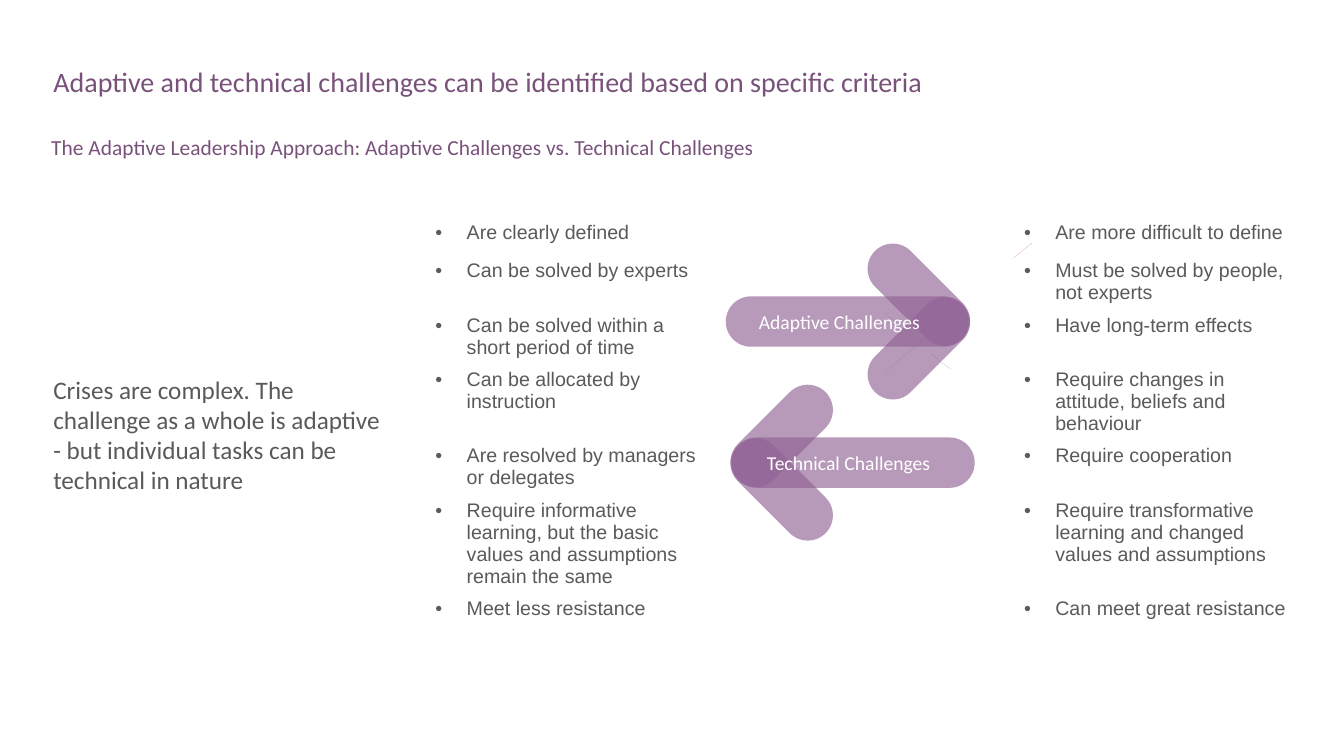
import pptx
import pptx.util
import pptx.dml.color
import pptx.enum.shapes
import pptx.enum.text
import pptx.oxml.ns
import lxml.etree

# The page is a grid of square cells: 133.33 columns by 75 rows
CELL = 0.1
COLUMNS, ROWS = 133.33, 75
GREY, PLUM, MAUVE, WHITE = "595A59", "79527B", "916395", "FFFFFF"
TOP = pptx.enum.text.MSO_ANCHOR.TOP
MIDDLE = pptx.enum.text.MSO_ANCHOR.MIDDLE

CRITERIA = [
    # row height, technical challenge, adaptive challenge
    (3.8, "Are clearly defined", "Are more difficult to define"),
    (5.4, "Can be solved by experts", "Must be solved by people, not experts"),
    (5.4, "Can be solved within a short period of time", "Have long-term effects"),
    (7.5, "Can be allocated by instruction",
     "Require changes in attitude, beliefs and behaviour"),
    (5.4, "Are resolved by managers or delegates", "Require cooperation"),
    (9.7, "Require informative learning, but the basic values and assumptions "
          "remain the same",
     "Require transformative learning and changed values and assumptions"),
    (4.1, "Meet less resistance", "Can meet great resistance"),
]

SLIVERS = [
    ("53A58F", [(87.8, 31.1), (91.2, 34), (87.8, 31.1)]),
    ("498977", [(93.9, 31.7), (91.2, 34), (93.9, 31.7)]),
    ("53A58F", [(91.2, 34), (87.8, 36.9), (91.2, 34)]),
    ("498977", [(92.4, 35.1), (93.3, 35.9), (94.3, 36.6), (93.3, 35.9)]),
    ("B14434", [(102.4, 24.1), (101.4, 24.9), (100.5, 25.6), (101.4, 24.9)]),
]


def cells(count):
    return pptx.util.Inches(count * CELL)


def color(value):
    return pptx.dml.color.RGBColor.from_string(value)


def paint(shape, value, opacity=100):
    shape.shadow.inherit = False
    shape.line.fill.background()
    shape.fill.solid()
    shape.fill.fore_color.rgb = color(value)
    if opacity < 100:
        tone = shape.fill._xPr.find(".//" + pptx.oxml.ns.qn("a:srgbClr"))
        lxml.etree.SubElement(tone, pptx.oxml.ns.qn("a:alpha"), val=str(opacity * 1000))


def write(frame, text, size, value, font="Calibri", anchor=TOP, spacing=None):
    frame.text = text
    frame.word_wrap = True
    frame.vertical_anchor = anchor
    para = frame.paragraphs[0]
    para.alignment = pptx.enum.text.PP_ALIGN.LEFT
    if spacing:
        para.line_spacing = spacing
    for span in para.runs:
        span.font.size = pptx.util.Pt(size)
        span.font.name = font
        span.font.color.rgb = color(value)


def add_text(page, area, *args, **options):
    box = page.shapes.add_textbox(*map(cells, area))
    write(box.text_frame, *args, **options)


def add_title(page, area, text):
    title = page.shapes.title
    title.left, title.top, title.width, title.height = map(cells, area)
    write(title.text_frame, text, 20, PLUM, spacing=0.9)
    title.text_frame.auto_size = pptx.enum.text.MSO_AUTO_SIZE.NONE


def add_bullet(para):
    properties = para._p.get_or_add_pPr()
    indent = cells(3.1)
    properties.set("marL", str(indent))
    properties.set("indent", str(-indent))
    tint = lxml.etree.SubElement(properties, pptx.oxml.ns.qn("a:buClr"))
    lxml.etree.SubElement(tint, pptx.oxml.ns.qn("a:srgbClr"), val=GREY)
    lxml.etree.SubElement(properties, pptx.oxml.ns.qn("a:buFont"), typeface="Arial")
    lxml.etree.SubElement(properties, pptx.oxml.ns.qn("a:buChar"), char="•")


def add_criteria(page, left, top, width):
    height = sum(row[0] for row in CRITERIA)
    area = map(cells, (left, top, width, height))
    table = page.shapes.add_table(len(CRITERIA), 3, *area).table
    table.first_row = table.horz_banding = False
    for column in table.columns:
        column.width = cells(width / 3)
    for row, (row_height, technical, adaptive) in zip(table.rows, CRITERIA):
        row.height = cells(row_height)
        for cell, text in zip(row.cells, (technical, "", adaptive)):
            cell.fill.solid()
            cell.fill.fore_color.rgb = color(WHITE)
            if text:
                write(cell.text_frame, text, 14, GREY, font="Arial")
                add_bullet(cell.text_frame.paragraphs[0])
            else:
                # keeps the empty cell from stretching its row
                para = cell.text_frame.paragraphs[0]
                lxml.etree.SubElement(para._p, pptx.oxml.ns.qn("a:endParaRPr"), sz="1400")


def add_slivers(page):
    for value, points in SLIVERS:
        start, *others = [(cells(x), cells(y)) for x, y in points]
        outline = page.shapes.build_freeform(*start)
        outline.add_line_segments(others, close=True)
        paint(outline.convert_to_shape(), value)


def add_arrow(page, left, middle, direction, label):
    """A shaft and two barbs; direction is 1 for right and -1 for left."""
    group = page.shapes.add_group_shape()
    length, barb, thick = 24.1, 12.3, 5
    center = left + length / 2
    tip = center + direction * 7.1
    parts = [
        (center, middle, length, 0),
        (tip, middle + 2.65, barb, -45 * direction),
        (tip, middle - 2.65, barb, 45 * direction),
    ]
    for x, y, width, angle in parts:
        bar = group.shapes.add_shape(
            pptx.enum.shapes.MSO_SHAPE.ROUNDED_RECTANGLE,
            *map(cells, (x - width / 2, y - thick / 2, width, thick)))
        bar.adjustments[0] = 0.5
        bar.rotation = angle
        paint(bar, MAUVE, opacity=65)
    text_left = left + 2.4 - direction * 0.1
    box = group.shapes.add_textbox(*map(cells, (text_left, middle - 5, 19.2, 10)))
    write(box.text_frame, label, 14, WHITE, anchor=MIDDLE)


def main():
    deck = pptx.Presentation()
    deck.slide_width, deck.slide_height = cells(COLUMNS), cells(ROWS)
    page = deck.slides.add_slide(deck.slide_layouts.get_by_name("Title Only"))

    # Criteria on both sides of the arrows
    add_criteria(page, 42.2, 21.5, 87.6)

    # Headings and the statement on the left
    add_text(page, (4.3, 17.9, 34.9, 50.4),
             "Crises are complex. The challenge as a whole is adaptive - but "
             "individual tasks can be technical in nature", 18, GREY, anchor=MIDDLE)
    add_title(page, (4.3, 6.3, 125.4, 6.4),
              "Adaptive and technical challenges can be identified based on "
              "specific criteria")
    add_text(page, (4.1, 13.5, 125.6, 2.8),
             "The Adaptive Leadership Approach: Adaptive Challenges vs. "
             "Technical Challenges", 15.3, PLUM, spacing=0.7)

    # Opposing arrows in the middle column
    add_slivers(page)
    add_arrow(page, 72, 31.9, 1, "Adaptive Challenges")
    add_arrow(page, 72.6, 45.9, -1, "Technical Challenges")

    deck.save("out.pptx")


if __name__ == "__main__":
    main()
